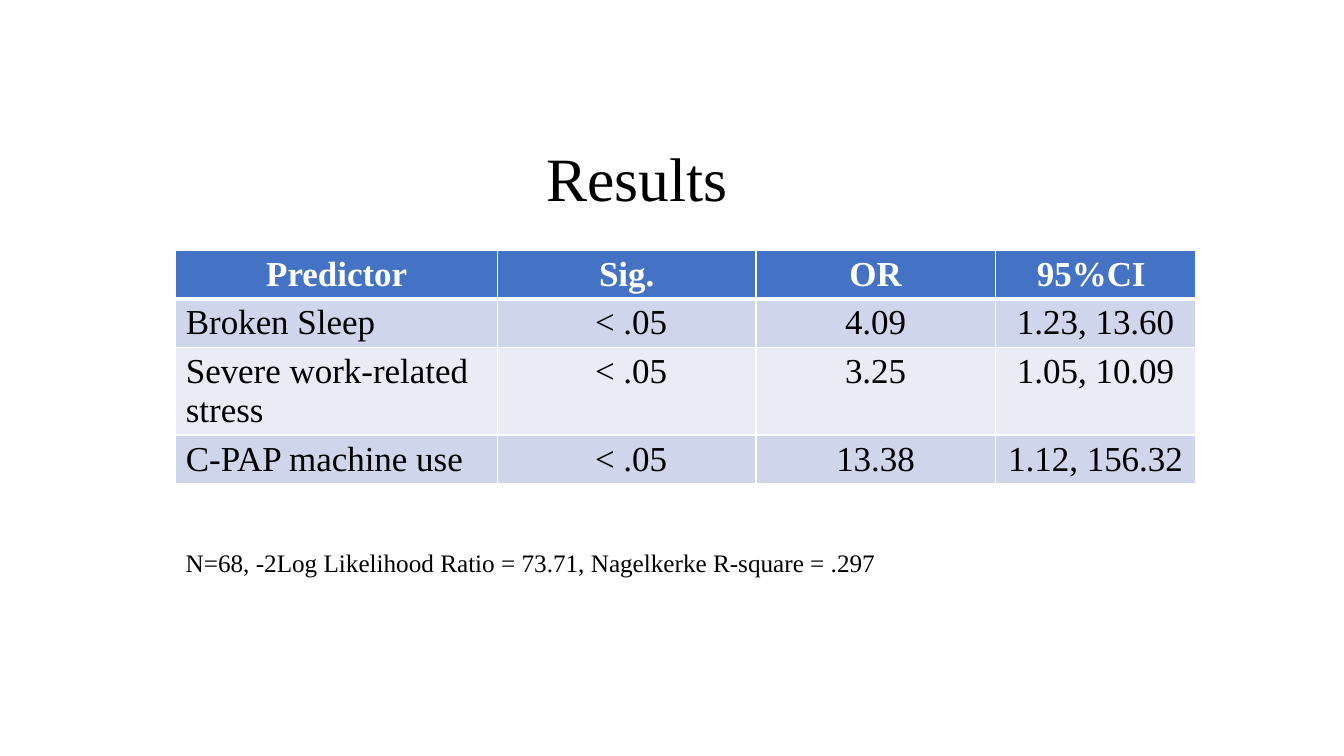
import pptx
import pptx.dml.color
import pptx.enum.text
import pptx.oxml
import pptx.oxml.ns
import pptx.util

Cm = pptx.util.Cm
ALIGN = pptx.enum.text.PP_ALIGN
ANCHOR = pptx.enum.text.MSO_ANCHOR
FONT = "Times New Roman"
COLOURS = {"text": "000000", "white": "FFFFFF", "header": "4472C4",
           "odd": "CFD5EA", "even": "E9EBF5"}


def add_text(paragraph, text, size, colour="text", bold=False, align=ALIGN.LEFT):
    paragraph.alignment = align
    run = paragraph.add_run()
    run.text = text
    run.font.name = FONT
    run.font.size = pptx.util.Pt(size)
    run.font.bold = bold
    run.font.color.rgb = pptx.dml.color.RGBColor.from_string(COLOURS[colour])


def add_border(cell, side, points):
    line = pptx.oxml.parse_xml(
        f'<a:{side} {pptx.oxml.ns.nsdecls("a")} w="{pptx.util.Pt(points)}">'
        f'<a:solidFill><a:srgbClr val="{COLOURS["white"]}"/></a:solidFill></a:{side}>')
    cell._tc.get_or_add_tcPr().append(line)


presentation = pptx.Presentation()
presentation.slide_width = Cm(33.87)
presentation.slide_height = Cm(19.05)
slide = presentation.slides.add_slide(presentation.slide_layouts[5])

# Title
title = slide.shapes.title
title.left, title.top, title.width, title.height = Cm(13.51), Cm(2.26), Cm(10.13), Cm(4.65)
title.text_frame.vertical_anchor = ANCHOR.MIDDLE
title_paragraph = title.text_frame.paragraphs[0]
title_paragraph.line_spacing = 0.9
add_text(title_paragraph, "Results", 44)

# Table of predictors
rows = [
    ("Predictor", "Sig.", "OR", "95%CI "),
    ("Broken Sleep", " < .05", "4.09", "1.23, 13.60"),
    ("Severe work-related stress", " < .05", "3.25", "1.05, 10.09"),
    ("C-PAP machine use", " < .05", "13.38", "1.12, 156.32"),
]
column_widths = [8.11, 6.51, 6.03, 5.06]
row_heights = [1.23, 1.23, 2.2, 1.23]
table = slide.shapes.add_table(
    len(rows), len(column_widths), Cm(4.43), Cm(6.3),
    Cm(sum(column_widths)), Cm(sum(row_heights))).table
for column, width in zip(table.columns, column_widths):
    column.width = Cm(width)
for row, height in zip(table.rows, row_heights):
    row.height = Cm(height)

for row_index, texts in enumerate(rows):
    is_header = row_index == 0
    fill = "header" if is_header else "odd" if row_index % 2 else "even"
    for column_index, text in enumerate(texts):
        cell = table.cell(row_index, column_index)
        # Borders come before the fill in the cell properties
        for side in ("lnL", "lnR", "lnT", "lnB"):
            below_header = (row_index, side) in ((0, "lnB"), (1, "lnT"))
            add_border(cell, side, 3 if below_header else 1)
        cell.fill.solid()
        cell.fill.fore_color.rgb = pptx.dml.color.RGBColor.from_string(COLOURS[fill])
        is_label = column_index == 0 and not is_header
        add_text(cell.text_frame.paragraphs[0], text, 25,
                 "white" if is_header else "text", is_header,
                 ALIGN.LEFT if is_label else ALIGN.CENTER)

# Model fit note
note = slide.shapes.add_textbox(Cm(4.43), Cm(13.67), Cm(30.07), Cm(1.8))
note.text_frame.word_wrap = True
add_text(note.text_frame.paragraphs[0],
         "N=68, -2Log Likelihood Ratio = 73.71, Nagelkerke R-square = .297", 18)

presentation.save("out.pptx")
